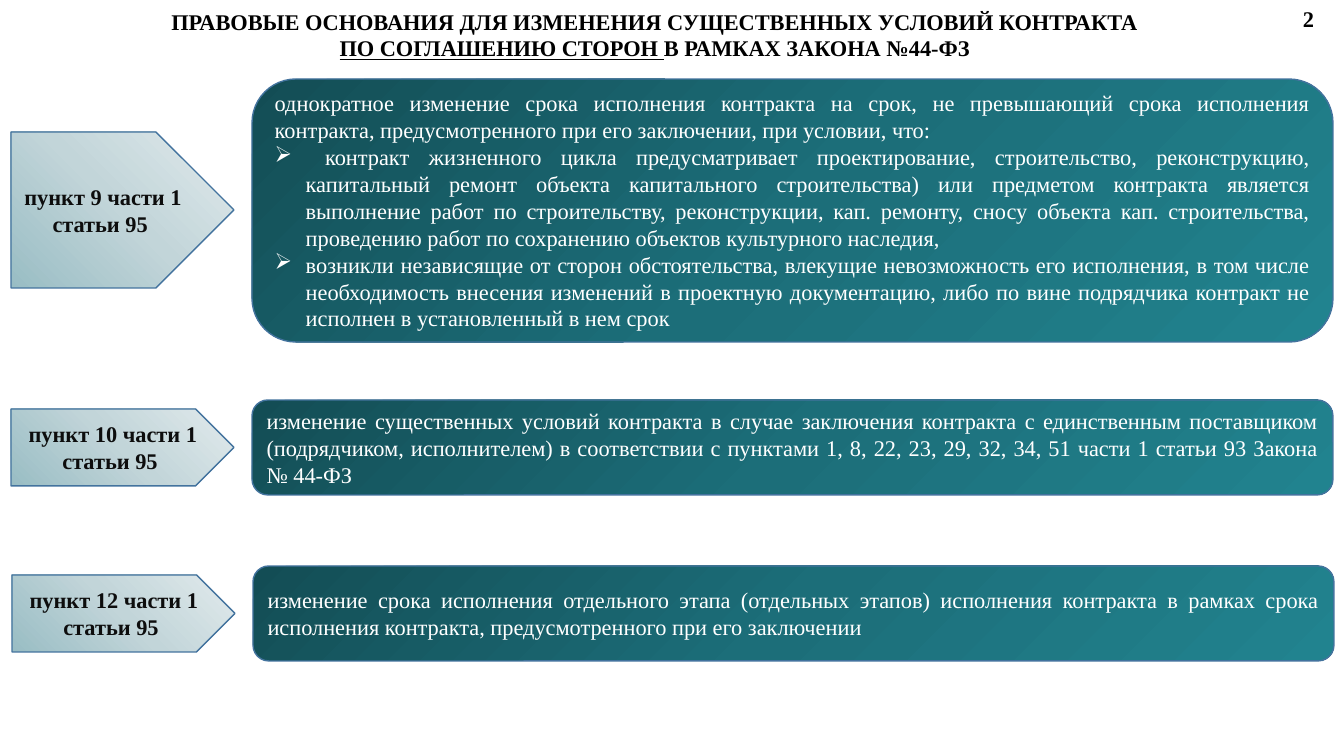
import copy
from dataclasses import dataclass

import pptx
import pptx.dml.color
import pptx.enum.shapes
import pptx.enum.text
import pptx.oxml.ns
import pptx.oxml
import pptx.util

ALIGN = pptx.enum.text.PP_ALIGN
ANCHOR = pptx.enum.text.MSO_ANCHOR
PRESET = pptx.enum.shapes.MSO_SHAPE
EMU_PER_PX = 914400 / 100.8


@dataclass(frozen=True)
class Theme:
    font: str = "Times New Roman"
    size: int = 16
    title: str = "000000"
    label: str = "0D0D0D"
    body: str = "FFFFFF"
    outline: str = "43739E"
    card_gradient: tuple[str, ...] = ("134D55", "1C6E79", "21838F")
    arrow_gradient: tuple[str, ...] = ("99BDC4", "C2D5D9", "E1EAEC")


@dataclass(frozen=True)
class Box:
    left: int
    top: int
    width: int
    height: int

    def emu(self) -> list[pptx.util.Emu]:
        return [px(v) for v in (self.left, self.top, self.width, self.height)]


@dataclass(frozen=True)
class Line:
    text: str
    bullet: bool = False
    underlined: str = ""  # leading part of the line set with an underline


@dataclass(frozen=True)
class Ground:
    label: str
    arrow: Box
    card: Box
    lines: tuple[Line, ...]


THEME = Theme()

TITLE = (
    Line("ПРАВОВЫЕ ОСНОВАНИЯ ДЛЯ ИЗМЕНЕНИЯ СУЩЕСТВЕННЫХ УСЛОВИЙ КОНТРАКТА "),
    Line("В РАМКАХ ЗАКОНА №44-ФЗ ", underlined="ПО СОГЛАШЕНИЮ СТОРОН "),
)

GROUNDS = (
    Ground(
        "пункт 9 части 1 статьи 95 ", Box(11, 132, 223, 156), Box(252, 79, 1081, 263),
        (
            Line("однократное изменение срока исполнения контракта на срок, не превышающий "
                 "срока исполнения контракта, предусмотренного при его заключении, при условии, что:"),
            Line(" контракт жизненного цикла предусматривает проектирование, строительство, "
                 "реконструкцию, капитальный ремонт объекта капитального строительства) или "
                 "предметом контракта является выполнение работ по строительству, реконструкции, "
                 "кап. ремонту, сносу объекта кап. строительства, проведению работ по сохранению "
                 "объектов культурного наследия, ", bullet=True),
            Line("возникли независящие от сторон обстоятельства, влекущие невозможность его "
                 "исполнения, в том числе необходимость внесения изменений в проектную "
                 "документацию, либо по вине подрядчика контракт не исполнен в установленный "
                 "в нем срок ", bullet=True),
        ),
    ),
    Ground(
        "пункт 10 части 1 статьи 95 ", Box(11, 409, 223, 77), Box(252, 400, 1081, 95),
        (Line("изменение существенных условий контракта в случае заключения контракта с "
              "единственным поставщиком (подрядчиком, исполнителем) в соответствии с пунктами "
              "1, 8, 22, 23, 29, 32, 34, 51 части 1 статьи 93 Закона № 44-ФЗ"),),
    ),
    Ground(
        "пункт 12 части 1 статьи 95 ", Box(12, 575, 223, 77), Box(253, 566, 1081, 95),
        (Line("изменение срока исполнения отдельного этапа (отдельных этапов) исполнения "
              "контракта в рамках срока исполнения контракта, предусмотренного при его "
              "заключении"),),
    ),
)


def px(value: float) -> pptx.util.Emu:
    return pptx.util.Emu(round(value * EMU_PER_PX))


def rgb(code: str) -> pptx.dml.color.RGBColor:
    return pptx.dml.color.RGBColor.from_string(code)


def add_bullet(paragraph) -> None:
    """Hang the paragraph on an arrow bullet."""
    properties = paragraph._p.get_or_add_pPr()
    properties.set("marL", str(px(31)))
    properties.set("indent", str(px(-31)))
    mark = pptx.oxml.parse_xml(f'<a:buChar {pptx.oxml.ns.nsdecls("a")} char="➢"/>')
    properties.append(mark)


def write(frame, lines: tuple[Line, ...], *, color: str, bold: bool = False,
          align=ALIGN.CENTER, anchor=ANCHOR.MIDDLE) -> None:
    frame.word_wrap = True
    frame.auto_size = pptx.enum.text.MSO_AUTO_SIZE.NONE
    frame.vertical_anchor = anchor
    for index, line in enumerate(lines):
        paragraph = frame.add_paragraph() if index else frame.paragraphs[0]
        paragraph.alignment = align
        if line.bullet:
            add_bullet(paragraph)
        for text, underline in ((line.underlined, True), (line.text, None)):
            if not text:
                continue
            run = paragraph.add_run()
            run.text = text
            run.font.name = THEME.font
            run.font.size = pptx.util.Pt(THEME.size)
            run.font.bold = bold
            run.font.underline = underline
            run.font.color.rgb = rgb(color)


def add_panel(slide, preset, box: Box, colors: tuple[str, ...], angle: int):
    """Add an outlined shape with evenly spaced gradient stops."""
    panel = slide.shapes.add_shape(preset, *box.emu())
    panel.shadow.inherit = False
    panel.line.color.rgb = rgb(THEME.outline)
    panel.line.width = pptx.util.Pt(1)
    panel.fill.gradient()
    panel.fill.gradient_angle = angle
    stops = panel._element.spPr.find(".//" + pptx.oxml.ns.qn("a:gsLst"))
    for _ in range(len(colors) - len(stops)):
        stops.insert(1, copy.deepcopy(stops[0]))
    for index, (stop, color) in enumerate(zip(panel.fill.gradient_stops, colors)):
        stop.position = index / (len(colors) - 1)
        stop.color.rgb = rgb(color)
    return panel


def add_ground(slide, ground: Ground) -> None:
    card = add_panel(slide, PRESET.ROUNDED_RECTANGLE, ground.card, THEME.card_gradient, 315)
    write(card.text_frame, ground.lines, color=THEME.body, align=ALIGN.JUSTIFY)
    arrow = add_panel(slide, PRESET.PENTAGON, ground.arrow, THEME.arrow_gradient, 45)
    write(arrow.text_frame, (Line(ground.label),), color=THEME.label, bold=True)


def main() -> None:
    deck = pptx.Presentation()
    deck.slide_width, deck.slide_height = px(1344), px(756)
    slide = deck.slides.add_slide(deck.slide_layouts.get_by_name("Title Only"))

    # Title
    heading = slide.shapes.title
    heading.left, heading.top, heading.width, heading.height = Box(29, 1, 1257, 67).emu()
    write(heading.text_frame, TITLE, color=THEME.title, bold=True)

    # Legal grounds
    for ground in GROUNDS:
        add_ground(slide, ground)

    # Page number
    page_number = slide.shapes.add_textbox(*Box(1293, 0, 41, 37).emu())
    write(page_number.text_frame, (Line("2"),), color=THEME.title, bold=True,
          align=ALIGN.LEFT, anchor=ANCHOR.TOP)

    deck.save("out.pptx")


if __name__ == "__main__":
    main()
